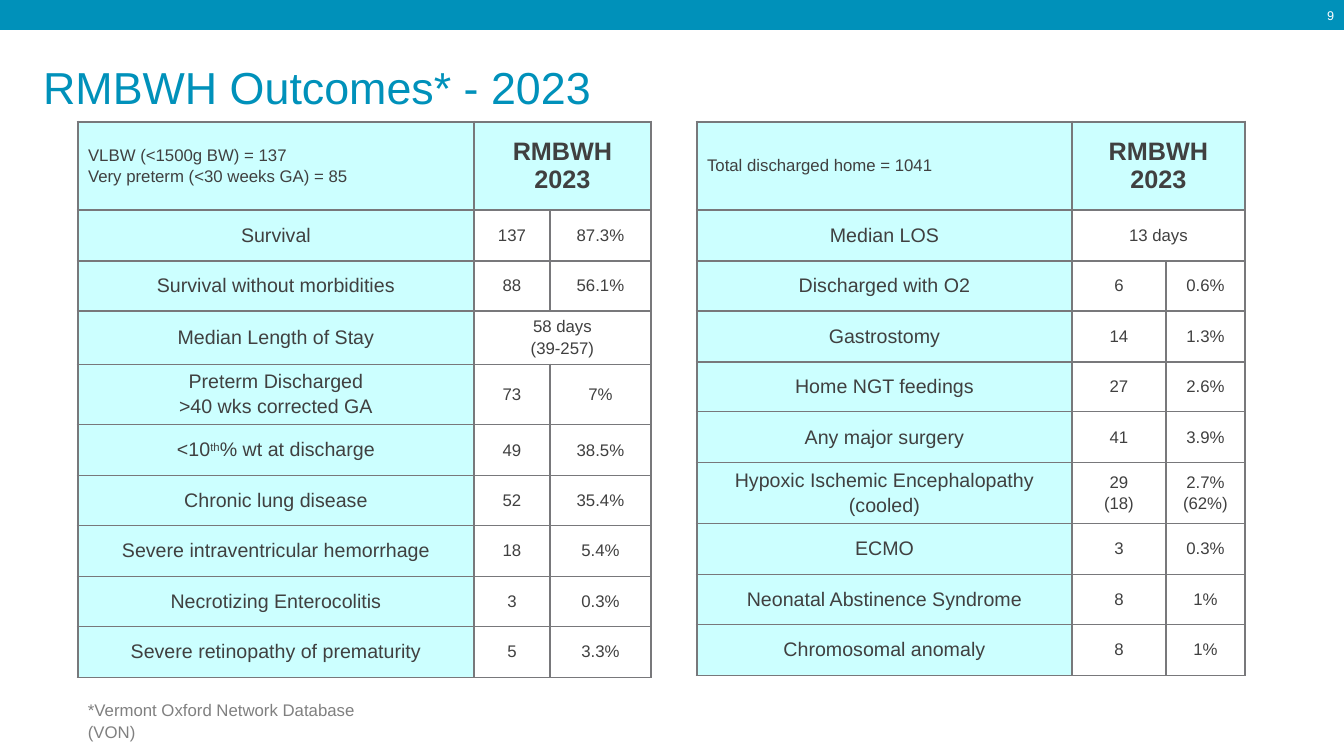
from dataclasses import dataclass
from lxml.etree import SubElement
from pptx import Presentation
from pptx.dml.color import RGBColor
from pptx.enum.shapes import MSO_SHAPE
from pptx.enum.text import MSO_ANCHOR as ANCHOR, MSO_AUTO_SIZE as AUTO, PP_ALIGN as ALIGN
from pptx.oxml.ns import qn
from pptx.util import Pt

EMU_PER_PX = 914400 / 100.8


@dataclass(frozen=True)
class Theme:
    font: str = "Arial"
    brand: str = "0091BA"
    white: str = "FFFFFF"
    label_fill: str = "CCFFFF"
    ink: str = "404040"
    muted: str = "808080"
    border: str = "78787B"
    title: int = 32
    heading: int = 18
    label: int = 14
    body: int = 12
    number: int = 9
    thin: float = 1
    thick: float = 2.25


THEME = Theme()

PRETERM = [
    ("VLBW (<1500g BW) = 137\nVery preterm (<30 weeks GA) = 85", "RMBWH 2023"),
    ("Survival", "137", "87.3%"),
    ("Survival without morbidities", "88", "56.1%"),
    ("Median Length of Stay", "58 days\n(39-257)"),
    ("Preterm Discharged\n>40 wks corrected GA", "73", "7%"),
    ("<10^th^% wt at discharge", "49", "38.5%"),
    ("Chronic lung disease", "52", "35.4%"),
    ("Severe intraventricular hemorrhage", "18", "5.4%"),
    ("Necrotizing Enterocolitis", "3", "0.3%"),
    ("Severe retinopathy of prematurity", "5", "3.3%"),
]
DISCHARGED = [
    ("Total discharged home = 1041", "RMBWH 2023"),
    ("Median LOS", "13 days"),
    ("Discharged with O2", "6", "0.6%"),
    ("Gastrostomy", "14", "1.3%"),
    ("Home NGT feedings", "27", "2.6%"),
    ("Any major surgery", "41", "3.9%"),
    ("Hypoxic Ischemic Encephalopathy\n(cooled)", "29\n(18)", "2.7%\n(62%)"),
    ("ECMO", "3", "0.3%"),
    ("Neonatal Abstinence Syndrome", "8", "1%"),
    ("Chromosomal anomaly", "8", "1%"),
]


def px(n):
    return round(n * EMU_PER_PX)


def rgb(color):
    return RGBColor.from_string(color)


def write(tf, text, size, color, align=ALIGN.LEFT, bold=False):
    for i, line in enumerate(text.split("\n")):
        p = tf.add_paragraph() if i else tf.paragraphs[0]
        p.alignment = align
        if i:
            p.space_before = Pt(size / 6)
        p.font.name = THEME.font
        p.font.size = Pt(size)
        p.font.bold = bold
        p.font.color.rgb = rgb(color)
        for j, part in enumerate(line.split("^")):
            r = p.add_run()
            r.text = part
            if j % 2:
                r._r.get_or_add_rPr().set("baseline", "30000")


def add_title(s, text, x, y, w, h):
    sp = s.shapes.title
    sp.left, sp.top, sp.width, sp.height = map(px, (x, y, w, h))
    tf = sp.text_frame
    tf.auto_size = AUTO.NONE
    tf.vertical_anchor = ANCHOR.MIDDLE
    tf.margin_bottom = px(10)
    write(tf, text, THEME.title, THEME.brand)


def add_band(s, x, y, w, h):
    sp = s.shapes.add_shape(MSO_SHAPE.RECTANGLE, px(x), px(y), px(w), px(h))
    sp.shadow.inherit = False
    sp.fill.solid()
    sp.fill.fore_color.rgb = rgb(THEME.brand)
    sp.line.fill.background()


def add_text(s, text, x, y, w, h, size, color, align=ALIGN.LEFT, anchor=ANCHOR.TOP):
    tf = s.shapes.add_textbox(px(x), px(y), px(w), px(h)).text_frame
    tf.word_wrap = True
    tf.vertical_anchor = anchor
    write(tf, text, size, color, align)
    return tf


def style_cell(cell, fill, left, top):
    tc_pr = cell._tc.get_or_add_tcPr()
    for side, width in (("L", left), ("R", THEME.thin), ("T", top), ("B", THEME.thin)):
        ln = SubElement(tc_pr, qn(f"a:ln{side}"), w=str(Pt(width)))
        SubElement(SubElement(ln, qn("a:solidFill")), qn("a:srgbClr"), val=THEME.border)
    cell.fill.solid()
    cell.fill.fore_color.rgb = rgb(fill)
    cell.vertical_anchor = ANCHOR.MIDDLE


def row_height(row, label):
    if row == 0:
        return 88
    return 58 if "\n" in label else 50 + row % 2


def add_outcomes(s, rows, x, y, widths):
    heights = [row_height(i, row[0]) for i, row in enumerate(rows)]
    table = s.shapes.add_table(len(rows), len(widths), px(x), px(y),
                               px(sum(widths)), px(sum(heights))).table
    table.first_row = table.horz_banding = False
    for column, width in zip(table.columns, widths):
        column.width = px(width)
    for i, row in enumerate(rows):
        table.rows[i].height = px(heights[i])
        for j in range(len(widths)):
            fill = THEME.label_fill if i == 0 or j == 0 else THEME.white
            style_cell(table.cell(i, j), fill, THEME.thin if j else THEME.thick,
                       THEME.thin if i else THEME.thick)
        if len(row) < len(widths):
            table.cell(i, 1).merge(table.cell(i, 2))
        for j, text in enumerate(row):
            heading = i == 0 and j == 1
            size = THEME.heading if heading else THEME.label if i and j == 0 else THEME.body
            align = ALIGN.LEFT if i == j == 0 else ALIGN.CENTER
            write(table.cell(i, j).text_frame, text, size, THEME.ink, align, heading)


def main():
    prs = Presentation()
    prs.slide_width, prs.slide_height = px(1344), px(756)
    s = prs.slides.add_slide(prs.slide_layouts[5])
    add_band(s, 0, 0, 1344, 30)
    add_title(s, "RMBWH Outcomes* - 2023", 33, 41, 1278, 96)
    add_text(s, "9", 1289, 0, 55, 30, THEME.number, THEME.white, ALIGN.RIGHT, ANCHOR.MIDDLE)
    add_outcomes(s, PRETERM, 78, 122, (396, 76, 101))
    add_outcomes(s, DISCHARGED, 697, 122, (375, 94, 79))
    tf = add_text(s, "*Vermont Oxford Network Database (VON)", 78, 693, 331, 52,
                  THEME.body, THEME.muted)
    tf.paragraphs[0].line_spacing = 1.1
    prs.save("out.pptx")


if __name__ == "__main__":
    main()
